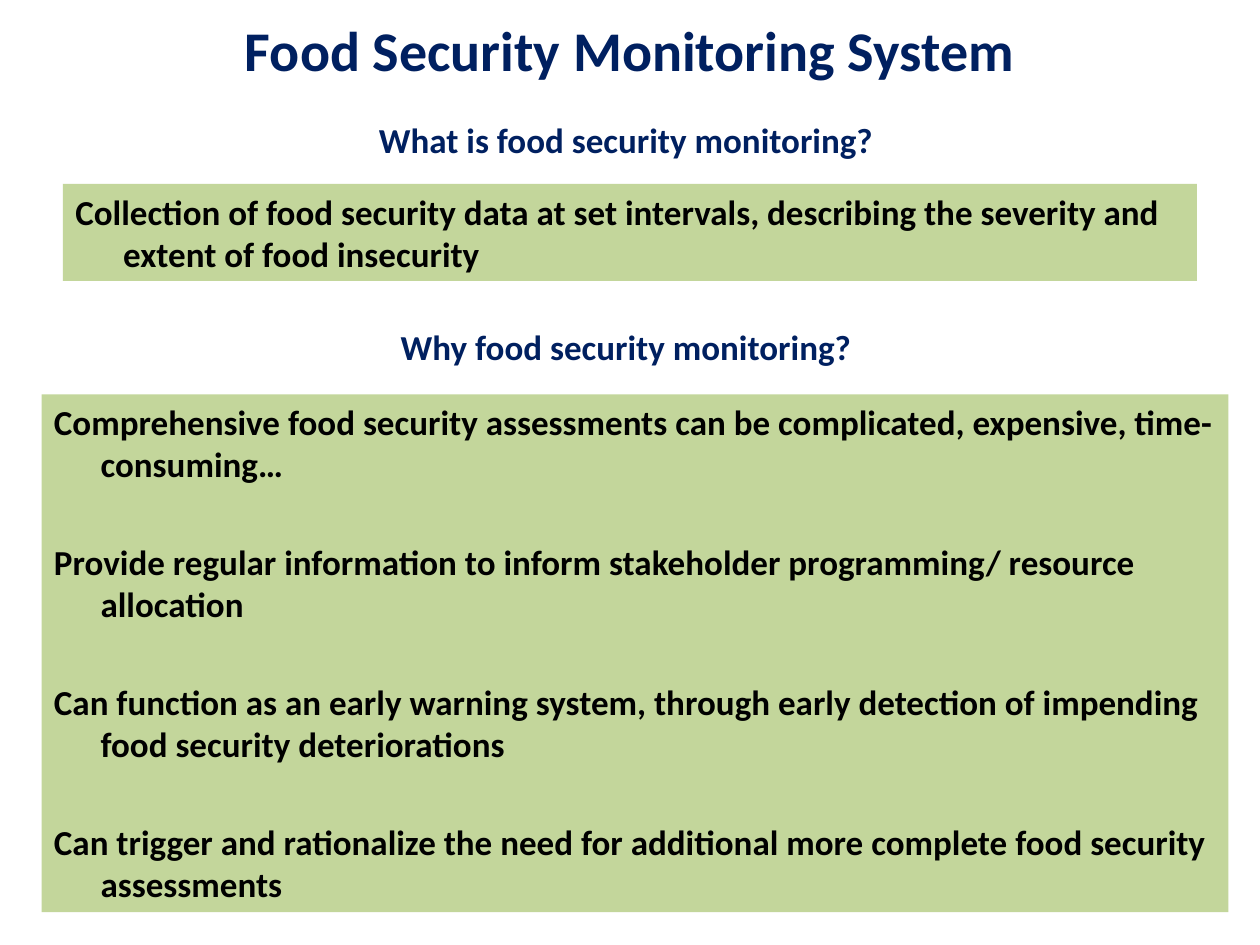
from dataclasses import dataclass

from pptx import Presentation
from pptx.dml.color import RGBColor
from pptx.enum.shapes import MSO_SHAPE
from pptx.enum.text import MSO_ANCHOR, PP_ALIGN
from pptx.util import Inches, Pt

WIDE, HIGH = Inches(10), Inches(7.5)
HUES = {"navy": "002060", "green": "C3D69B", "black": "000000"}
FONT = "Calibri"


@dataclass
class Area:
    """A place on the slide, in percent of its width and height."""
    left: float
    top: float
    width: float
    height: float

    def place(self) -> tuple[int, int, int, int]:
        return (int(WIDE * self.left / 100), int(HIGH * self.top / 100),
                int(WIDE * self.width / 100), int(HIGH * self.height / 100))


@dataclass
class Head:
    area: Area
    text: str


@dataclass
class Panel:
    area: Area
    lines: list[str]
    indent: float


TITLE = Head(Area(5, 1.07, 90, 8.27), "Food Security Monitoring System")
HEADS = [
    Head(Area(5, 11.73, 90, 6.13), "What is food security monitoring? "),
    Head(Area(5, 32.8, 90, 7.73), "Why food security monitoring? "),
]
PANELS = [
    Panel(Area(5, 19.47, 90, 10.27), [
        "Collection of food security data at set intervals, describing "
        "the severity and extent of food insecurity",
    ], 0.38),
    Panel(Area(3.3, 41.73, 94.2, 54.8), [
        "Comprehensive food security assessments can be complicated, "
        "expensive, time-consuming…",
        "Provide regular information to inform stakeholder programming/ "
        "resource allocation",
        "Can function as an early warning system, through early detection "
        "of impending food security deteriorations",
        "Can trigger and rationalize the need for additional more complete "
        "food security assessments",
    ], 0.37),
]


def hue(name: str) -> RGBColor:
    return RGBColor.from_string(HUES[name])


def add_text(para, text: str, size: int, tint: str) -> None:
    run = para.add_run()
    run.text = text
    run.font.name = FONT
    run.font.size = Pt(size)
    run.font.bold = True
    run.font.color.rgb = hue(tint)


def fill_head(shape, head: Head, size: int) -> None:
    shape.left, shape.top, shape.width, shape.height = head.area.place()
    frame = shape.text_frame
    frame.word_wrap = True
    frame.vertical_anchor = MSO_ANCHOR.MIDDLE
    para = frame.paragraphs[0]
    para.alignment = PP_ALIGN.CENTER
    add_text(para, head.text, size, "navy")


def draw_panel(slide, panel: Panel) -> None:
    shape = slide.shapes.add_shape(MSO_SHAPE.RECTANGLE, *panel.area.place())
    shape.shadow.inherit = False
    shape.fill.solid()
    shape.fill.fore_color.rgb = hue("green")
    shape.line.fill.background()
    frame = shape.text_frame
    frame.word_wrap = True
    frame.vertical_anchor = MSO_ANCHOR.TOP
    for row, line in enumerate(panel.lines):
        para = frame.add_paragraph() if row else frame.paragraphs[0]
        para.alignment = PP_ALIGN.LEFT
        para.space_before = Pt(32 if row else 0)
        # Hanging indent
        props = para._p.get_or_add_pPr()
        props.set("marL", str(Inches(panel.indent)))
        props.set("indent", str(-Inches(panel.indent)))
        add_text(para, line, 20, "black")


def main() -> None:
    deck = Presentation()
    deck.slide_width, deck.slide_height = WIDE, HIGH
    slide = deck.slides.add_slide(deck.slide_layouts[5])
    fill_head(slide.shapes.title, TITLE, 32)
    for head in HEADS:
        fill_head(slide.shapes.add_textbox(*head.area.place()), head, 20)
    for panel in PANELS:
        draw_panel(slide, panel)
    deck.save("out.pptx")


if __name__ == "__main__":
    main()
